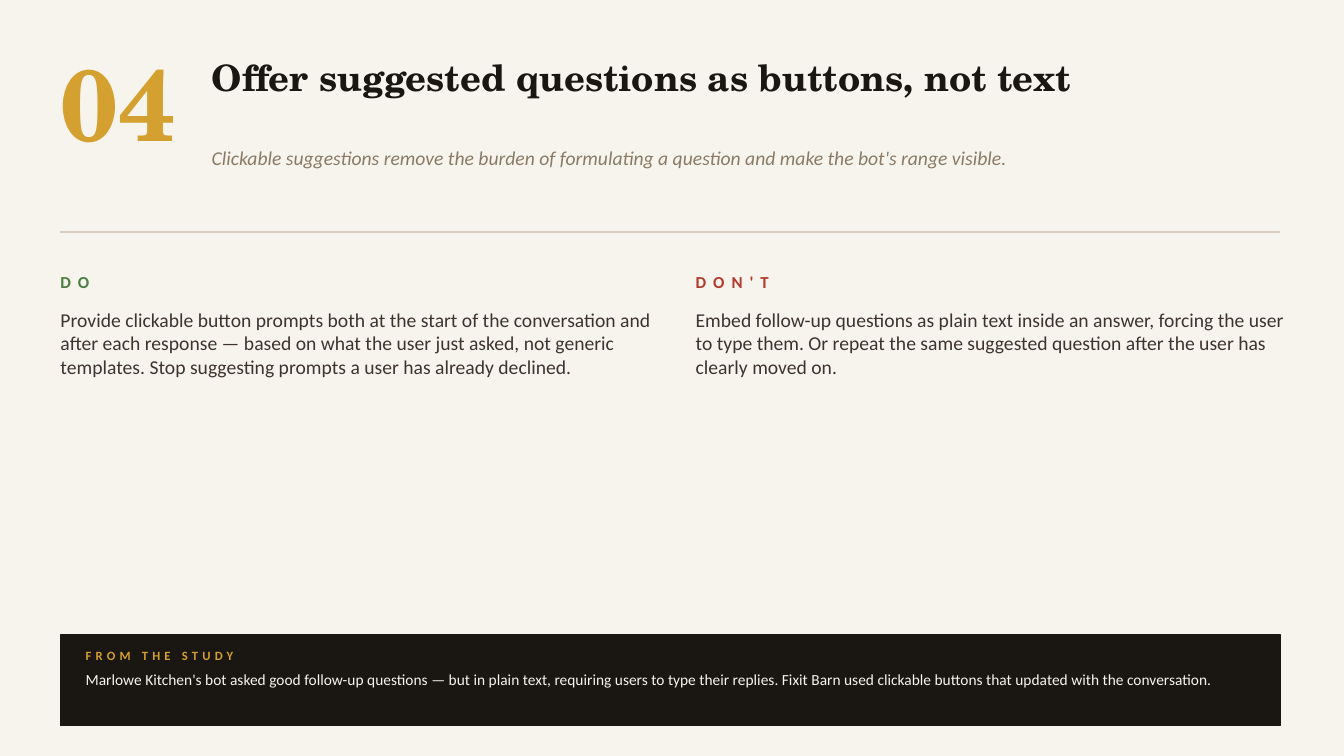
from dataclasses import dataclass
from typing import NamedTuple

from lxml.etree import SubElement
from pptx import Presentation
from pptx.dml.color import RGBColor
from pptx.enum.shapes import MSO_CONNECTOR as Connector, MSO_SHAPE as Shape
from pptx.enum.text import MSO_ANCHOR as Anchor, MSO_AUTO_SIZE as AutoSize, PP_ALIGN as Align
from pptx.oxml.ns import qn
from pptx.util import Emu, Pt

EMU_PER_PX = 9144  # 100 px to the inch


@dataclass(frozen=True)
class Theme:
    paper: str = "F7F4EE"
    ink: str = "1A1612"
    gold: str = "D4A030"
    muted: str = "8A7A66"
    rule: str = "D8CFC0"
    body: str = "3D352D"
    do: str = "4A7D3F"
    dont: str = "B33A2A"
    serif: str = "TeX Gyre Schola"
    sans: str = "Calibri"
    number_pt: int = 72
    title_pt: int = 26
    body_pt: int = 14
    label_pt: int = 12
    study_pt: int = 11
    study_label_pt: int = 9


T = Theme()


class Box(NamedTuple):
    x: int
    y: int
    w: int
    h: int


@dataclass(frozen=True)
class Style:
    name: str
    size: int
    color: str
    bold: bool = False
    italic: bool = False
    tracking: int = 0
    anchor: Anchor = Anchor.TOP
    space_after: int = 0


class Advice(NamedTuple):
    x: int
    label: str
    color: str
    text: str


NUMBER = Style(T.serif, T.number_pt, T.gold, bold=True)
TITLE = Style(T.serif, T.title_pt, T.ink, bold=True)
SUBTITLE = Style(T.sans, T.body_pt, T.muted, italic=True)
BODY = Style(T.sans, T.body_pt, T.body, space_after=8)
STUDY_LABEL = Style(T.sans, T.study_label_pt, T.gold, bold=True, tracking=3, anchor=Anchor.MIDDLE)
STUDY = Style(T.sans, T.study_pt, T.paper)

MARGIN, CONTENT_W = 60, 1210
HEAD_X, HEAD_W = 210, 1060
RULE_Y = 230
ADVICE_W = 600
STUDY_X = 85

ADVICE = [
    Advice(MARGIN, "DO", T.do,
           "Provide clickable button prompts both at the start of the conversation and after each "
           "response — based on what the user just asked, not generic templates. Stop suggesting "
           "prompts a user has already declined."),
    Advice(690, "DON'T", T.dont,
           "Embed follow-up questions as plain text inside an answer, forcing the user to type them. "
           "Or repeat the same suggested question after the user has clearly moved on."),
]


def px(n: int) -> Emu:
    return Emu(n * EMU_PER_PX)


def rgb(color: str) -> RGBColor:
    return RGBColor.from_string(color)


def write(sp, box: Box, text: str, style: Style) -> None:
    """Place a text shape and fill it with one formatted paragraph."""
    sp.left, sp.top, sp.width, sp.height = map(px, box)
    tf = sp.text_frame
    frame = dict(word_wrap=True, auto_size=AutoSize.NONE, vertical_anchor=style.anchor,
                 margin_left=0, margin_top=0, margin_right=0, margin_bottom=0)
    for key, value in frame.items():
        setattr(tf, key, value)
    p = tf.paragraphs[0]
    p.alignment = Align.LEFT
    if style.space_after:
        p.space_after = Pt(style.space_after)
    r = p.add_run()
    r.text = text
    font = dict(name=style.name, size=Pt(style.size), bold=style.bold, italic=style.italic)
    for key, value in font.items():
        setattr(r.font, key, value)
    r.font.color.rgb = rgb(style.color)
    if style.tracking:
        r.font._element.set("spc", str(style.tracking * 100))


def add_text(slide, box: Box, text: str, style: Style) -> None:
    write(slide.shapes.add_textbox(*map(px, box)), box, text, style)


def add_header(slide) -> None:
    write(slide.shapes.title, Box(HEAD_X, 55, HEAD_W, 110),
          "Offer suggested questions as buttons, not text", TITLE)
    add_text(slide, Box(MARGIN, 40, 150, 120), "04", NUMBER)
    add_text(slide, Box(HEAD_X, 145, HEAD_W, 60),
             "Clickable suggestions remove the burden of formulating a question "
             "and make the bot's range visible.", SUBTITLE)
    rule = slide.shapes.add_connector(
        Connector.STRAIGHT, px(MARGIN), px(RULE_Y), px(MARGIN + CONTENT_W), px(RULE_Y))
    rule.line.color.rgb = rgb(T.rule)
    rule.line.width = Pt(1)
    SubElement(rule._element.spPr, qn("a:effectLst"))


def add_advice(slide, advice: Advice) -> None:
    label = Style(T.sans, T.label_pt, advice.color, bold=True, tracking=5, anchor=Anchor.MIDDLE)
    add_text(slide, Box(advice.x, 260, ADVICE_W, 40), advice.label, label)
    add_text(slide, Box(advice.x, 305, ADVICE_W, 310), advice.text, BODY)


def add_study(slide) -> None:
    panel = slide.shapes.add_shape(Shape.RECTANGLE, *map(px, Box(MARGIN, 630, CONTENT_W, 90)))
    panel.shadow.inherit = False
    panel.fill.solid()
    panel.fill.fore_color.rgb = rgb(T.ink)
    panel.line.color.rgb = rgb(T.ink)
    panel.line.width = Pt(1)
    add_text(slide, Box(STUDY_X, 638, 250, 25), "FROM THE STUDY", STUDY_LABEL)
    add_text(slide, Box(STUDY_X, 665, 1160, 50),
             "Marlowe Kitchen's bot asked good follow-up questions — but in plain text, requiring "
             "users to type their replies. Fixit Barn used clickable buttons that updated with "
             "the conversation.", STUDY)


def main() -> None:
    prs = Presentation()
    prs.slide_width, prs.slide_height = px(1333), px(750)
    slide = prs.slides.add_slide(prs.slide_layouts.get_by_name("Title Only"))
    slide.background.fill.solid()
    slide.background.fill.fore_color.rgb = rgb(T.paper)
    add_header(slide)
    for advice in ADVICE:
        add_advice(slide, advice)
    add_study(slide)
    prs.save("out.pptx")


if __name__ == "__main__":
    main()
